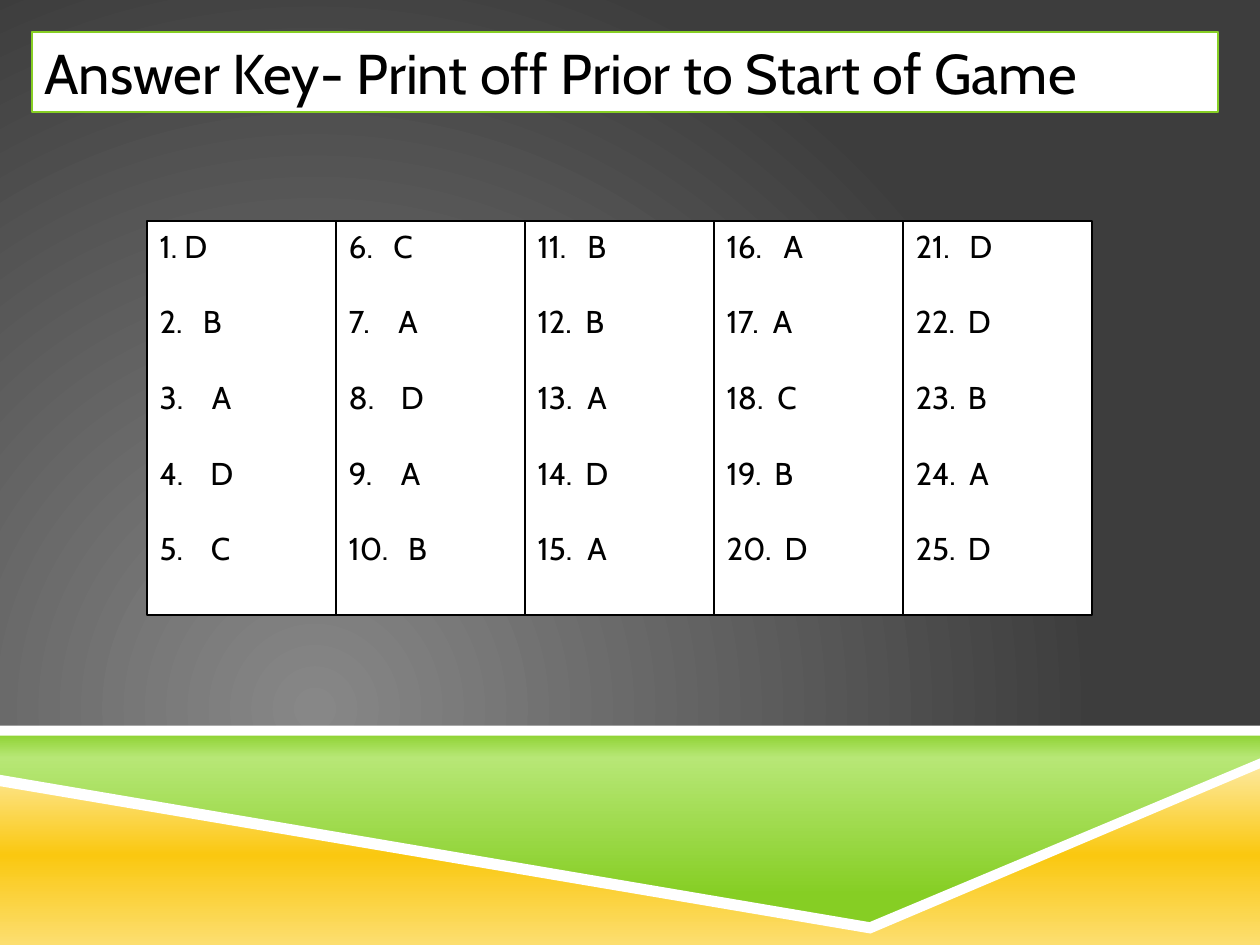
import pptx
import pptx.dml.color
import pptx.enum.shapes
import pptx.enum.text
import pptx.oxml.ns
import pptx.util
from lxml import etree
from pptx.util import Cm

RGBColor = pptx.dml.color.RGBColor
WHITE = RGBColor(0xFF, 0xFF, 0xFF)
BLACK = RGBColor(0x00, 0x00, 0x00)
GREEN = RGBColor(0x86, 0xCE, 0x24)
LIGHT_GREEN = RGBColor(0xB7, 0xE7, 0x76)
GREY = RGBColor(0x87, 0x87, 0x87)
DARK_GREY = RGBColor(0x3D, 0x3D, 0x3D)
GOLD = RGBColor(0xFA, 0xC8, 0x10)
PALE_GOLD = RGBColor(0xFD, 0xE9, 0x9F)
SOFT_GOLD = RGBColor(0xFC, 0xDE, 0x70)
FONT = "Cabin"
TITLE = "Answer Key- Print off Prior to Start of Game"
ANSWERS = [
    [("D", 0.5), ("B", 0.87), ("A", 1.05), ("D", 1.02), ("C", 1.03)],
    [("C", 0.9), ("A", 1), ("D", 1.05), ("A", 1.05), ("B", 1.2)],
    [("B", 1), ("B", 0.96), ("A", 1), ("D", 0.96), ("A", 1)],
    [("A", 1.15), ("A", 0.93), ("C", 1.02), ("B", 0.96), ("D", 1.17)],
    [("D", 1.08), ("D", 1.05), ("B", 1.05), ("A", 1.08), ("D", 1.05)],
]


def add_element(parent, tag, **attributes):
    """Append a DrawingML element to parent and return it."""
    values = {name: str(value) for name, value in attributes.items()}
    return etree.SubElement(parent, pptx.oxml.ns.qn(tag), values)


def set_gradient(fill, element, stops, center=None):
    """Fill downwards, or in circles around the center rectangle."""
    fill.gradient()
    gradient = element.find(".//" + pptx.oxml.ns.qn("a:gradFill"))
    for child in list(gradient):
        gradient.remove(child)
    stop_list = add_element(gradient, "a:gsLst")
    for percent, color in stops:
        stop = add_element(stop_list, "a:gs", pos=percent * 1000)
        add_element(stop, "a:srgbClr", val=color)
    if center:
        circle = add_element(gradient, "a:path", path="circle")
        add_element(circle, "a:fillToRect", **center)
    else:
        add_element(gradient, "a:lin", ang=90 * 60000, scaled=0)


def set_box(shape, fill, line=None):
    """Give a shape a solid fill, an optional outline and no shadow."""
    shape.shadow.inherit = False
    shape.fill.solid()
    shape.fill.fore_color.rgb = fill
    if line is None:
        shape.line.fill.background()
    else:
        shape.line.color.rgb = line
        shape.line.width = pptx.util.Pt(1)


def write_text(paragraph, text, size, tab=None, space_before=0):
    """Write left-aligned black text, with an optional tab stop in cm."""
    paragraph.text = text
    paragraph.alignment = pptx.enum.text.PP_ALIGN.LEFT
    paragraph.space_before = pptx.util.Pt(space_before)
    if tab is not None:
        tabs = add_element(paragraph._p.get_or_add_pPr(), "a:tabLst")
        add_element(tabs, "a:tab", pos=Cm(tab), algn="l")
    font = paragraph.runs[0].font
    font.name = FONT
    font.size = pptx.util.Pt(size)
    font.color.rgb = BLACK


def add_polygon(slide, left, top, points):
    """Draw a closed outline from points in cm relative to left and top."""
    places = [(left + Cm(x), top + Cm(y)) for x, y in points]
    builder = slide.shapes.build_freeform(*places[0])
    builder.add_line_segments(places[1:], close=True)
    shape = builder.convert_to_shape()
    set_box(shape, WHITE)
    return shape


def add_footer(slide, left, top, width):
    """Draw the green and gold band with its white stripes."""
    green = add_polygon(slide, left, top, [
        (0, 0.1), (25.4, 0.08), (25.4, 0.79), (17.5, 4.09), (0, 1.09)])
    set_gradient(green.fill, green._element,
                 [(0, GREEN), (14, LIGHT_GREEN), (83, GREEN)])
    gold = add_polygon(slide, left, top, [
        (0, 1.14), (17.58, 4.11), (25.4, 0.79), (25.4, 4.42), (0, 4.42)])
    set_gradient(gold.fill, gold._element,
                 [(0, PALE_GOLD), (50, GOLD), (100, SOFT_GOLD)])
    rule = slide.shapes.add_shape(
        pptx.enum.shapes.MSO_SHAPE.RECTANGLE, left, top, width, Cm(0.2))
    set_box(rule, WHITE)
    add_polygon(slide, left, top, [
        (0, 0.99), (17.53, 3.96), (25.4, 0.66),
        (25.4, 0.86), (17.55, 4.19), (0, 1.22)])


def add_title(slide, left, top, width, height):
    """Place the title in its white box."""
    title = slide.shapes.title
    title.left, title.top, title.width, title.height = left, top, width, height
    set_box(title, WHITE, GREEN)
    frame = title.text_frame
    frame.auto_size = pptx.enum.text.MSO_AUTO_SIZE.NONE
    frame.vertical_anchor = pptx.enum.text.MSO_ANCHOR.MIDDLE
    write_text(frame.paragraphs[0], TITLE, 32)


def add_answers(slide, left, top, width, height):
    """Lay out the numbered answers in equal columns."""
    column_width = width // len(ANSWERS)
    number = 1
    for index, column in enumerate(ANSWERS):
        box = slide.shapes.add_shape(
            pptx.enum.shapes.MSO_SHAPE.RECTANGLE,
            left + index * column_width, top, column_width, height)
        set_box(box, WHITE, BLACK)
        frame = box.text_frame
        frame.word_wrap = True
        frame.vertical_anchor = pptx.enum.text.MSO_ANCHOR.TOP
        for row, (answer, tab) in enumerate(column):
            paragraph = frame.add_paragraph() if row else frame.paragraphs[0]
            write_text(paragraph, f"{number}.\t{answer}", 18, tab=tab,
                       space_before=21.6 if row else 0)
            number += 1


def main():
    """Build and save the answer key slide."""
    presentation = pptx.Presentation()
    presentation.slide_width = Cm(25.4)
    presentation.slide_height = Cm(19.05)
    slide = presentation.slides.add_slide(presentation.slide_layouts[5])
    set_gradient(slide.background.fill, slide._element,
                 [(0, GREY), (100, DARK_GREY)],
                 center={"l": 50000, "t": 100000, "r": 100000, "b": 50000})
    add_footer(slide, 0, Cm(14.63), presentation.slide_width)
    add_title(slide, Cm(0.64), Cm(0.64), Cm(23.92), Cm(1.62))
    add_answers(slide, Cm(2.97), Cm(4.45), Cm(19.05), Cm(7.95))
    presentation.save("out.pptx")


if __name__ == "__main__":
    main()
